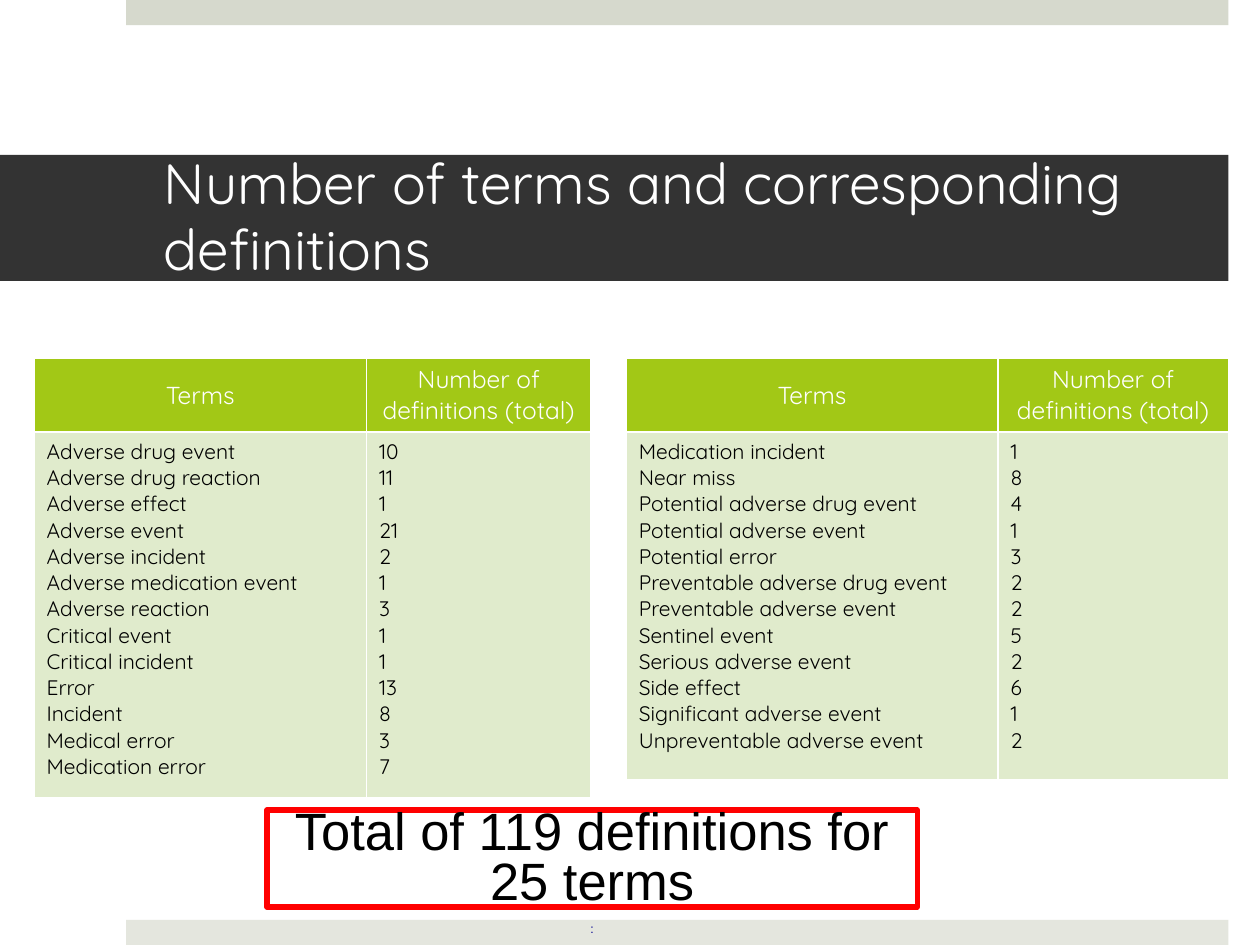
from lxml import etree
from pptx import Presentation
from pptx import util as u
from pptx.dml.color import RGBColor
from pptx.enum import shapes, text
from pptx.oxml import ns

WHITE = RGBColor(0xFF, 0xFF, 0xFF)
BLACK = RGBColor(0, 0, 0)
CHARCOAL = RGBColor(0x33, 0x33, 0x33)
TOP_GRAY = RGBColor(0xD6, 0xD9, 0xCD)
BOTTOM_GRAY = RGBColor(0xE4, 0xE6, 0xDE)
GREEN = RGBColor(0xA2, 0xC8, 0x16)
PALE_GREEN = RGBColor(0xE0, 0xEB, 0xCC)
RED = RGBColor(0xFF, 0, 0)
NAVY = RGBColor(0, 0, 0x90)

WIDTH, HEIGHT = 10, 7.5
BAR_LEFT, BAR_HEIGHT = 1, 0.2
RIGHT_EDGE = 9.75
TABLE_TOP, HEADER_HEIGHT = 2.84, 0.59
HEADINGS = (" Terms ", "Number of definitions (total)")

FIRST_TERMS = {
    "Adverse drug event": 10,
    "Adverse drug reaction": 11,
    "Adverse effect": 1,
    "Adverse event": 21,
    "Adverse incident": 2,
    "Adverse medication event": 1,
    "Adverse reaction": 3,
    "Critical event": 1,
    "Critical incident": 1,
    "Error": 13,
    "Incident": 8,
    "Medical error": 3,
    "Medication error": 7,
}
SECOND_TERMS = {
    "Medication incident": 1,
    "Near miss": 8,
    "Potential adverse drug event": 4,
    "Potential adverse event": 1,
    "Potential error": 3,
    "Preventable adverse drug event": 2,
    "Preventable adverse event": 2,
    "Sentinel event": 5,
    "Serious adverse event": 2,
    "Side effect": 6,
    "Significant adverse event": 1,
    "Unpreventable adverse event": 2,
}


def inches(*lengths):
    return [u.Inches(length) for length in lengths]


def format_text(paragraph, size, color, font="Quicksand", align=text.PP_ALIGN.LEFT):
    paragraph.alignment = align
    for run in paragraph.runs:
        run.font.name = font
        run.font.size = u.Pt(size)
        run.font.bold = False
        run.font.color.rgb = color


def add_bar(slide, top, color):
    bar = slide.shapes.add_shape(
        shapes.MSO_SHAPE.RECTANGLE,
        *inches(BAR_LEFT, top, RIGHT_EDGE - BAR_LEFT, BAR_HEIGHT))
    bar.shadow.inherit = False
    bar.fill.solid()
    bar.fill.fore_color.rgb = color
    bar.line.fill.background()


def set_title(slide, wording):
    title = slide.shapes.title
    title.left, title.top, title.width, title.height = inches(0, 1.23, RIGHT_EDGE, 1)
    title.fill.solid()
    title.fill.fore_color.rgb = CHARCOAL
    frame = title.text_frame
    frame.text = wording
    frame.auto_size = text.MSO_AUTO_SIZE.NONE
    frame.word_wrap = True
    frame.vertical_anchor = text.MSO_ANCHOR.MIDDLE
    frame.margin_left, frame.margin_right = inches(1.3, 0.3)
    frame.paragraphs[0].line_spacing = 0.96
    format_text(frame.paragraphs[0], 32.4, WHITE)


def border_cell(cell):
    properties = cell._tc.get_or_add_tcPr()
    for side in ("L", "R", "T", "B"):
        edge = etree.SubElement(properties, ns.qn(f"a:ln{side}"), w=str(u.Pt(1)))
        fill = etree.SubElement(edge, ns.qn("a:solidFill"))
        etree.SubElement(fill, ns.qn("a:srgbClr"), val=str(WHITE))


def fill_cell(cell, wording, fill, size, color, align, anchor):
    border_cell(cell)
    cell.fill.solid()
    cell.fill.fore_color.rgb = fill
    cell.vertical_anchor = anchor
    cell.text_frame.text = wording
    for paragraph in cell.text_frame.paragraphs:
        format_text(paragraph, size, color, align=align)


def add_terms_table(slide, left, column_widths, body_height, terms):
    row_heights = (HEADER_HEIGHT, body_height)
    table = slide.shapes.add_table(
        2, 2, *inches(left, TABLE_TOP, sum(column_widths), sum(row_heights))).table
    table.first_row = table.horz_banding = False
    for column, width in zip(table.columns, column_widths):
        column.width = u.Inches(width)
    for row, height in zip(table.rows, row_heights):
        row.height = u.Inches(height)
    bodies = ("\n".join(terms), "\n".join(map(str, terms.values())))
    for column, (heading, body) in enumerate(zip(HEADINGS, bodies)):
        fill_cell(table.cell(0, column), heading, GREEN, 14, WHITE,
                  text.PP_ALIGN.CENTER, text.MSO_ANCHOR.MIDDLE)
        fill_cell(table.cell(1, column), body, PALE_GREEN, 12, BLACK,
                  text.PP_ALIGN.LEFT, text.MSO_ANCHOR.TOP)


def add_total(slide):
    total = slide.shapes.add_shape(
        shapes.MSO_SHAPE.RECTANGLE, *inches(2.12, 6.43, 5.16, 0.77))
    total.shadow.inherit = False
    total.fill.background()
    total.line.color.rgb = RED
    total.line.width = u.Pt(3)
    frame = total.text_frame
    frame.word_wrap = True
    frame.vertical_anchor = text.MSO_ANCHOR.TOP
    frame.margin_top = frame.margin_bottom = 0
    frame.text = "Total of 119 definitions for 25 terms\n:"
    summary, colon = frame.paragraphs
    for paragraph, size, color in ((summary, 30, BLACK), (colon, 7, NAVY)):
        format_text(paragraph, size, color, "Arial", text.PP_ALIGN.CENTER)
        paragraph.line_spacing = 0.8
    colon.space_before = u.Pt(7.4)


def main():
    deck = Presentation()
    deck.slide_width, deck.slide_height = inches(WIDTH, HEIGHT)
    slide = deck.slides.add_slide(deck.slide_layouts.get_by_name("Title Only"))
    add_bar(slide, 0, TOP_GRAY)
    add_bar(slide, HEIGHT - BAR_HEIGHT, BOTTOM_GRAY)
    set_title(slide, "Number of terms and corresponding definitions")
    add_terms_table(slide, 0.27, (2.64, 1.78), 2.9, FIRST_TERMS)
    add_terms_table(slide, 4.97, (2.95, 1.83), 2.76, SECOND_TERMS)
    add_total(slide)
    deck.save("out.pptx")


if __name__ == "__main__":
    main()
